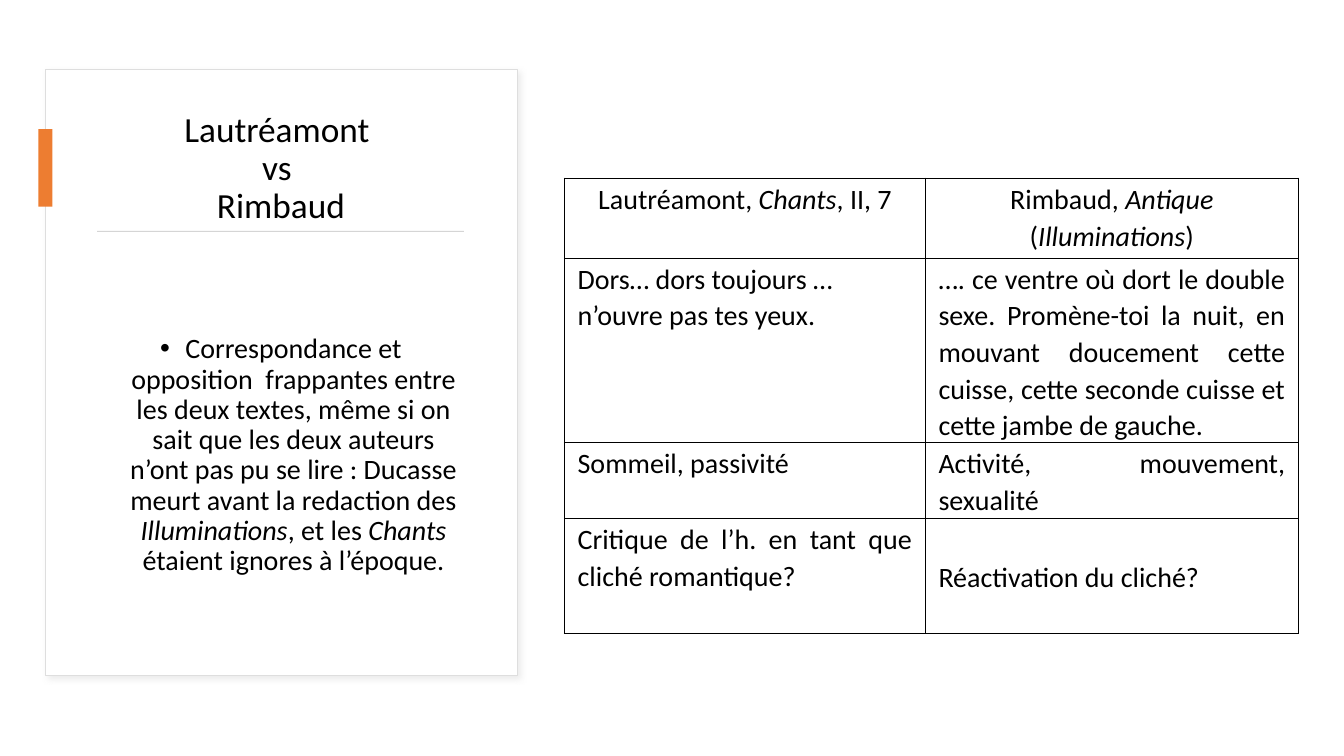
from lxml import etree
from pptx import Presentation
from pptx import util as u
from pptx.dml.color import RGBColor
from pptx.enum import shapes, text
from pptx.oxml import parse_xml
from pptx.oxml.ns import qn

FONT = "Calibri"
BLACK, WHITE, ORANGE = "000000", "FFFFFF", "ED7D31"
CENTER, JUSTIFY = text.PP_ALIGN.CENTER, text.PP_ALIGN.JUSTIFY
TOP, MIDDLE = text.MSO_ANCHOR.TOP, text.MSO_ANCHOR.MIDDLE
NAMESPACE = 'xmlns:a="http://schemas.openxmlformats.org/drawingml/2006/main"'

TITLE_LINES = ["Lautréamont ", "vs ", "Rimbaud"]
REMARK = [
    ("Correspondance et opposition  frappantes entre les deux textes, "
     "même si on sait que les deux auteurs n’ont pas pu se lire : "
     "Ducasse meurt avant la redaction des ", False),
    ("Illuminations", True), (", et les ", False), ("Chants ", True),
    ("étaient ignores à l’époque.", False),
]

# Each cell: alignment, anchor, paragraphs made of (words, italic) runs
COMPARISON = [
    [(CENTER, TOP, [[("Lautréamont, ", False), ("Chants", True), (", II, 7", False)]]),
     (CENTER, TOP, [[("Rimbaud, ", False), ("Antique", True), (" (", False),
                     ("Illuminations", True), (")", False)]])],
    [(JUSTIFY, TOP, [[("Dors… dors toujours … ", False)],
                     [("n’ouvre pas tes yeux.", False)]]),
     (JUSTIFY, TOP, [[("…. ce ventre où dort le double sexe. Promène-toi la nuit, "
                       "en mouvant doucement cette cuisse, cette seconde cuisse et "
                       "cette jambe de gauche.", False)]])],
    [(JUSTIFY, TOP, [[("Sommeil, passivité", False)]]),
     (JUSTIFY, TOP, [[("Activité, mouvement, sexualité", False)]])],
    [(JUSTIFY, TOP, [[("Critique de l’h. en tant que cliché romantique?", False)]]),
     (JUSTIFY, MIDDLE, [[("Réactivation du cliché?", False)]])],
]
COLUMN_WIDTHS = [257.8, 266.4]
ROW_HEIGHTS = [57, 132, 54, 82]


def color(value):
    return RGBColor.from_string(value)


def add_run(para, words, size, italic=False):
    span = para.add_run()
    span.text = words
    span.font.name = FONT
    span.font.size = u.Pt(size)
    span.font.italic = italic
    span.font.color.rgb = color(BLACK)


def set_insets(target, left, top, right, bottom):
    target.margin_left, target.margin_top = u.Pt(left), u.Pt(top)
    target.margin_right, target.margin_bottom = u.Pt(right), u.Pt(bottom)


def add_rect(page, left, top, width, height, fill, line=None):
    rect = page.shapes.add_shape(shapes.MSO_SHAPE.RECTANGLE, u.Pt(left), u.Pt(top),
                                 u.Pt(width), u.Pt(height))
    rect.shadow.inherit = False
    rect.fill.solid()
    rect.fill.fore_color.rgb = color(fill)
    if line:
        rect.line.color.rgb = color(line)
        rect.line.width = u.Pt(0.75)
    else:
        rect.line.fill.background()
    return rect


def add_soft_shadow(shape):
    effects = shape.element.spPr.find(qn("a:effectLst"))
    effects.append(parse_xml(
        f'<a:outerShdw {NAMESPACE} blurRad="{u.Pt(4)}" dist="{u.Pt(3)}" dir="2700000" '
        'algn="tl" rotWithShape="0"><a:srgbClr val="D9D9D9"><a:alpha val="50000"/>'
        '</a:srgbClr></a:outerShdw>'))


def place_title(page, left, top, width, height):
    title = page.shapes.title
    title.left, title.top = u.Pt(left), u.Pt(top)
    title.width, title.height = u.Pt(width), u.Pt(height)
    frame = title.text_frame
    frame.auto_size = text.MSO_AUTO_SIZE.NONE
    frame.word_wrap = True
    frame.vertical_anchor = MIDDLE
    para = frame.paragraphs[0]
    para.alignment = CENTER
    para.line_spacing = 0.9
    for index, words in enumerate(TITLE_LINES):
        if index:
            para.add_line_break()
        add_run(para, words, 25.2)


def add_remark(page, left, top, width, height):
    box = page.shapes.add_textbox(u.Pt(left), u.Pt(top), u.Pt(width), u.Pt(height))
    frame = box.text_frame
    frame.word_wrap = True
    set_insets(frame, 7.2, 62, 7.2, 3.6)
    para = frame.paragraphs[0]
    para.alignment = CENTER
    para.line_spacing = 0.9
    for words, italic in REMARK:
        add_run(para, words, 20, italic)
    props = para._p.get_or_add_pPr()
    props.set("marL", str(u.Pt(18)))
    props.set("indent", str(u.Pt(-18)))
    etree.SubElement(props, qn("a:buFont")).set("typeface", "Arial")
    etree.SubElement(props, qn("a:buChar")).set("char", "•")


def add_card(page, left, top, width, height):
    """White panel with accent tab, title, rule and remark."""
    card = add_rect(page, left, top, width, height, WHITE, "DEDEDE")
    add_soft_shadow(card)
    # Bring the title placeholder in front of the card
    card.element.addnext(page.shapes.title.element)
    inner_left, inner_width = left + 34, width - 68.4
    place_title(page, inner_left, top + 27.4, inner_width, 87)
    add_rect(page, left - 5, top + 42.5, 10, 55.4, ORANGE)
    add_rect(page, inner_left + 2.9, top + 115.2, 262, 0.72, "D5D5D5")
    add_remark(page, inner_left, top + 127.4, inner_width, 280)


def set_borders(cell):
    props = cell._tc.get_or_add_tcPr()
    for side in ("lnL", "lnR", "lnT", "lnB"):
        props.append(parse_xml(
            f'<a:{side} {NAMESPACE} w="{u.Pt(1)}"><a:solidFill>'
            f'<a:srgbClr val="{BLACK}"/></a:solidFill></a:{side}>'))


def fill_cell(cell, alignment, anchor, paragraphs):
    set_borders(cell)
    cell.fill.background()
    set_insets(cell, 9.4, 1.4, 9.4, 0)
    cell.vertical_anchor = anchor
    frame = cell.text_frame
    for index, runs in enumerate(paragraphs):
        para = frame.add_paragraph() if index else frame.paragraphs[0]
        para.alignment = alignment
        para.line_spacing = 1.07
        for words, italic in runs:
            add_run(para, words, 20, italic)


def add_comparison(page, left, top):
    table = page.shapes.add_table(
        len(ROW_HEIGHTS), len(COLUMN_WIDTHS), u.Pt(left), u.Pt(top),
        u.Pt(sum(COLUMN_WIDTHS)), u.Pt(sum(ROW_HEIGHTS))).table
    table.first_row = table.horz_banding = False
    for column, width in zip(table.columns, COLUMN_WIDTHS):
        column.width = u.Pt(width)
    for row, height, contents in zip(table.rows, ROW_HEIGHTS, COMPARISON):
        row.height = u.Pt(height)
        for cell, content in zip(row.cells, contents):
            fill_cell(cell, *content)


def main():
    deck = Presentation()
    deck.slide_width, deck.slide_height = u.Pt(960), u.Pt(540)
    page = deck.slides.add_slide(deck.slide_layouts[5])
    add_card(page, 32.4, 49.7, 337, 432.7)
    add_comparison(page, 403.2, 127.4)
    deck.save("out.pptx")


if __name__ == "__main__":
    main()
